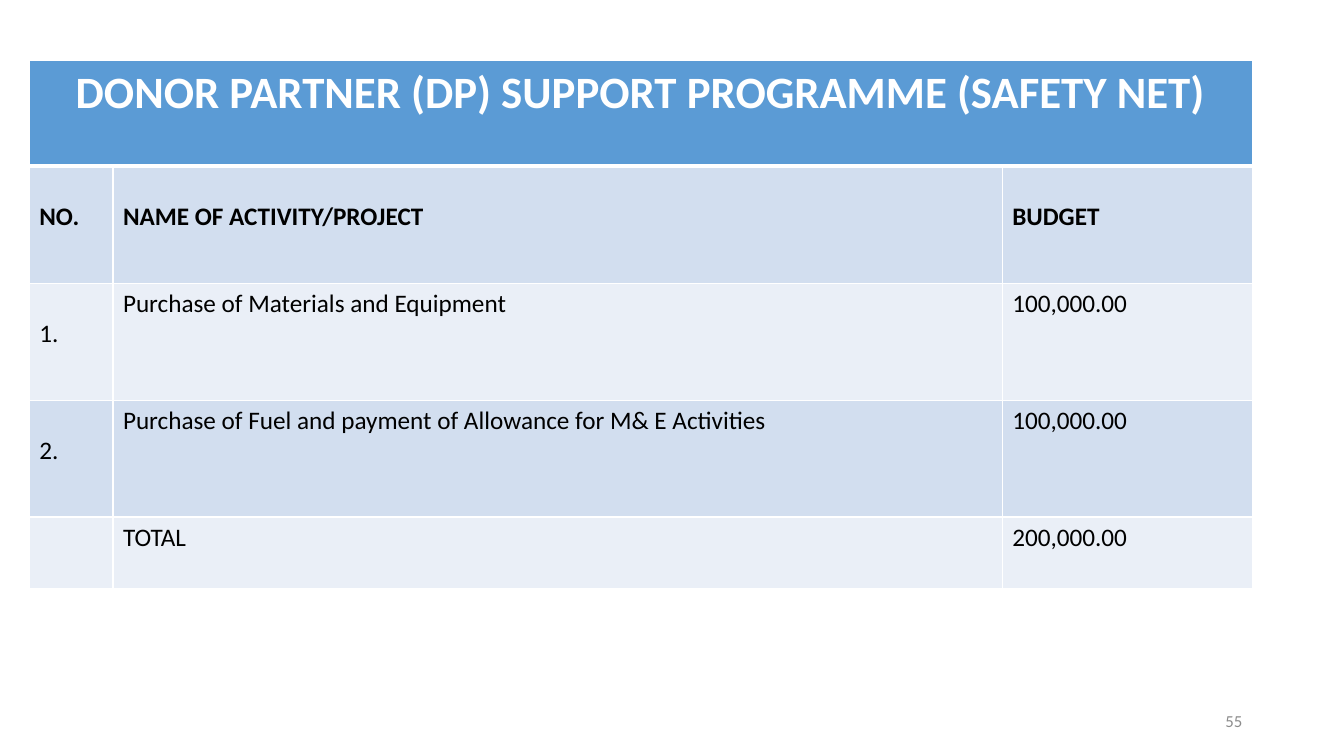
"""Build the donor partner support programme budget slide."""
from dataclasses import dataclass

from lxml.etree import SubElement
from pptx import Presentation
from pptx.dml.color import RGBColor
from pptx.enum.text import MSO_ANCHOR, PP_ALIGN
from pptx.oxml.ns import qn
from pptx.slide import Slide
from pptx.table import _Cell
from pptx.text.text import _Paragraph
from pptx.util import Inches, Pt

WHITE = RGBColor(0xFF, 0xFF, 0xFF)
BLACK = RGBColor(0x00, 0x00, 0x00)
GREY = RGBColor(0x8C, 0x8C, 0x8C)
BLUE = RGBColor(0x5B, 0x9B, 0xD5)
BAND_DARK = RGBColor(0xD2, 0xDE, 0xEF)
BAND_LIGHT = RGBColor(0xEA, 0xEF, 0xF7)
COLUMN_WIDTHS = (0.83, 8.82, 2.48)
LOWERED = 0.35
REGULAR = 0.05


@dataclass
class BudgetRow:
    texts: tuple[str, str, str]
    height: float
    fill: RGBColor
    top_margins: tuple[float, float, float] = (LOWERED, REGULAR, REGULAR)
    size: int = 18
    bold: bool = False
    color: RGBColor = BLACK
    top_line: float = 1
    bottom_line: float = 1


ROWS = (
    BudgetRow(("DONOR PARTNER (DP) SUPPORT PROGRAMME (SAFETY NET)", "", ""), 1.05, BLUE,
              (REGULAR,) * 3, size=32, bold=True, color=WHITE, bottom_line=3),
    BudgetRow(("NO.", "NAME OF ACTIVITY/PROJECT", "BUDGET"), 1.16, BAND_DARK,
              (LOWERED,) * 3, bold=True, top_line=3),
    BudgetRow(("1.", "Purchase of Materials and Equipment", "100,000.00"), 1.16, BAND_LIGHT),
    BudgetRow(("2.", "Purchase of Fuel and payment of Allowance for M& E Activities",
               "100,000.00"), 1.16, BAND_DARK),
    BudgetRow(("", "TOTAL", "200,000.00"), 0.71, BAND_LIGHT),
)


def write_text(paragraph: _Paragraph, text: str, size: int, color: RGBColor,
               bold: bool = False) -> None:
    """Write one formatted run into a paragraph."""
    run = paragraph.add_run()
    run.text = text
    run.font.color.rgb = color
    for name, value in {"name": "Calibri", "size": Pt(size), "bold": bold}.items():
        setattr(run.font, name, value)


def draw_borders(cell: _Cell, row: BudgetRow) -> None:
    """Give a cell white lines on its four sides."""
    properties = cell._tc.get_or_add_tcPr()
    widths = {"a:lnL": 1, "a:lnR": 1, "a:lnT": row.top_line, "a:lnB": row.bottom_line}
    for tag, width in widths.items():
        line = SubElement(properties, qn(tag), w=str(Pt(width)))
        fill = SubElement(line, qn("a:solidFill"))
        SubElement(fill, qn("a:srgbClr"), val=str(WHITE))


def format_cell(cell: _Cell, row: BudgetRow, column: int) -> None:
    """Fill a cell and write its text."""
    draw_borders(cell, row)
    cell.fill.solid()
    cell.fill.fore_color.rgb = row.fill
    cell.margin_top = Inches(row.top_margins[column])
    if row.texts[column]:
        write_text(cell.text_frame.paragraphs[0], row.texts[column],
                   row.size, row.color, row.bold)


def add_budget_table(slide: Slide) -> None:
    """Add the budget table with its merged heading."""
    table = slide.shapes.add_table(
        len(ROWS), len(COLUMN_WIDTHS), Inches(0.29), Inches(0.6),
        Inches(sum(COLUMN_WIDTHS)), Inches(sum(row.height for row in ROWS))).table
    for column, width in zip(table.columns, COLUMN_WIDTHS):
        column.width = Inches(width)
    for row_index, row in enumerate(ROWS):
        table.rows[row_index].height = Inches(row.height)
        for column_index in range(len(COLUMN_WIDTHS)):
            format_cell(table.cell(row_index, column_index), row, column_index)
    heading = table.cell(0, 0)
    heading.merge(table.cell(0, len(COLUMN_WIDTHS) - 1))
    heading.text_frame.paragraphs[0].alignment = PP_ALIGN.CENTER


def add_page_number(slide: Slide) -> None:
    """Add the page number at the lower right."""
    box = slide.shapes.add_textbox(Inches(9.42), Inches(6.95), Inches(3), Inches(0.4))
    frame = box.text_frame
    for name, value in {"word_wrap": True, "vertical_anchor": MSO_ANCHOR.MIDDLE}.items():
        setattr(frame, name, value)
    paragraph = frame.paragraphs[0]
    paragraph.alignment = PP_ALIGN.RIGHT
    write_text(paragraph, "55", 12, GREY)


def main() -> None:
    """Create and save the presentation."""
    presentation = Presentation()
    presentation.slide_width = Inches(13.33)
    presentation.slide_height = Inches(7.5)
    slide = presentation.slides.add_slide(presentation.slide_layouts[6])
    add_budget_table(slide)
    add_page_number(slide)
    presentation.save("out.pptx")


if __name__ == "__main__":
    main()
